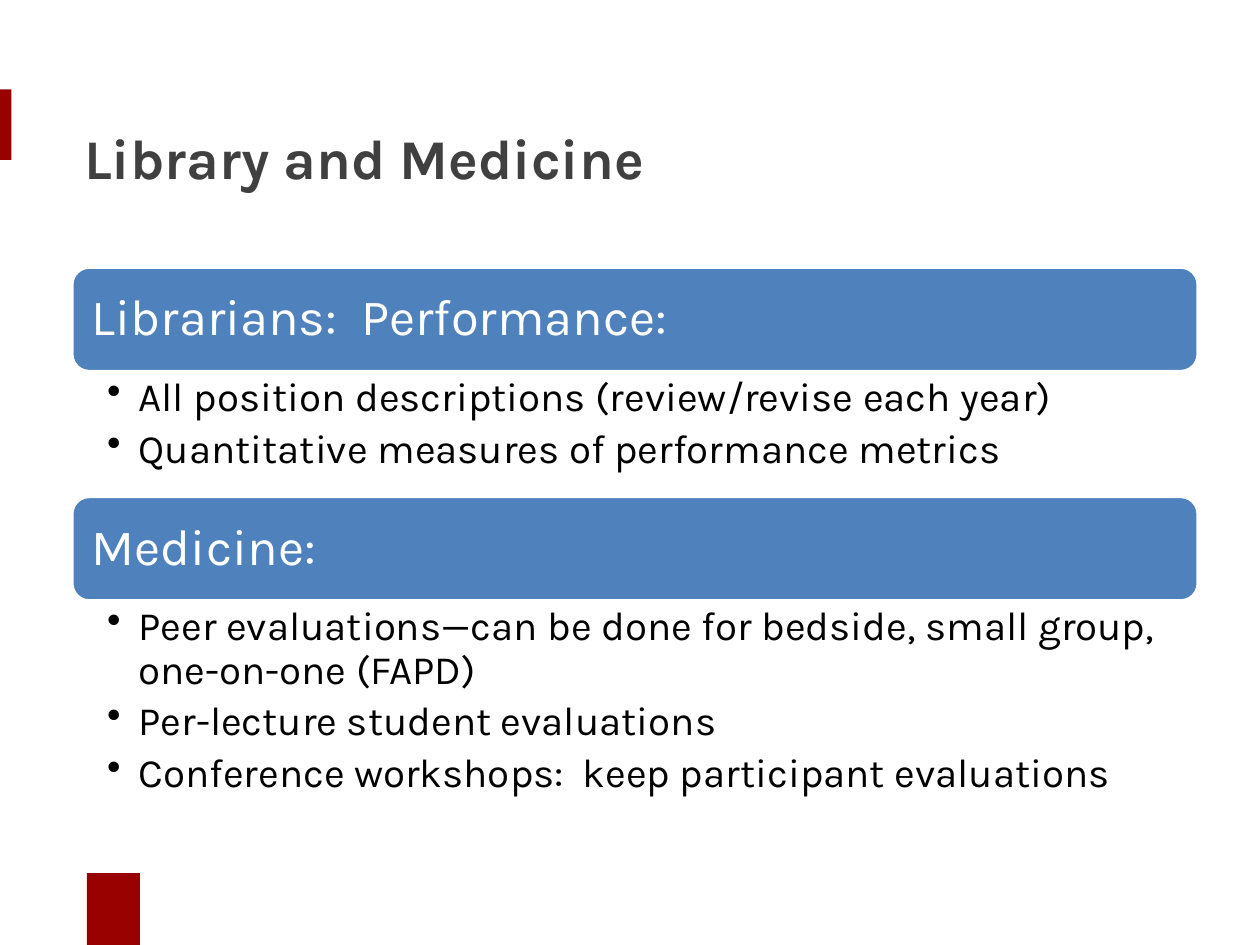
from lxml import etree
from pptx import Presentation
from pptx.dml.color import RGBColor
from pptx.enum import shapes, text
from pptx.oxml import ns
from pptx.util import Inches, Pt

COLORS = {"accent": "990000", "title": "404041", "bar": "4F81BD",
          "white": "FFFFFF", "body": "000000"}
LEFT, WIDTH, BAR_HEIGHT, BAR_INSET = 0.57, 8.94, 0.83, 0.04
SECTIONS = [
    (2.12, "Librarians:  Performance:", 0.98,
     ["All position descriptions (review/revise each year)",
      "Quantitative measures of performance metrics"]),
    (3.94, "Medicine:", 1.87,
     ["Peer evaluations—can be done for bedside, small group, one-on-one (FAPD)",
      "Per-lecture student evaluations",
      "Conference workshops:  keep participant evaluations"]),
]


class SlideBuilder:
    font = "Karla"

    def __init__(self, slide):
        self.slide = slide

    def color(self, name):
        return RGBColor.from_string(COLORS[name])

    def block(self, kind, box, fill, outline=None):
        block = self.slide.shapes.add_shape(kind, *map(Inches, box))
        block.shadow.inherit = False
        block.fill.solid()
        block.fill.fore_color.rgb = self.color(fill)
        if outline:
            block.line.color.rgb = self.color(outline)
            block.line.width = Pt(2)
        else:
            block.line.fill.background()

    def frame(self, box, insets, anchor):
        frame = self.slide.shapes.add_textbox(*map(Inches, box)).text_frame
        frame.word_wrap = True
        frame.vertical_anchor = anchor
        (frame.margin_left, frame.margin_top,
         frame.margin_right, frame.margin_bottom) = map(Inches, insets)
        return frame

    def words(self, paragraph, wording, size, color, bold=False):
        run = paragraph.add_run()
        run.text = wording
        run.font.name = self.font
        run.font.size = Pt(size)
        run.font.bold = bold
        run.font.color.rgb = self.color(color)

    def title(self, wording, box):
        frame = self.frame(box, (0.1, 0.05, 0.1, 0.05), text.MSO_ANCHOR.MIDDLE)
        self.words(frame.paragraphs[0], wording, 32, "title", bold=True)

    def heading(self, wording, top):
        self.block(shapes.MSO_SHAPE.ROUNDED_RECTANGLE,
                   (LEFT, top, WIDTH, BAR_HEIGHT), "bar", "white")
        box = (LEFT + BAR_INSET, top + BAR_INSET,
               WIDTH - 2 * BAR_INSET, BAR_HEIGHT - 2 * BAR_INSET)
        frame = self.frame(box, (0.12,) * 4, text.MSO_ANCHOR.MIDDLE)
        paragraph = frame.paragraphs[0]
        paragraph.line_spacing = 0.9
        self.words(paragraph, wording, 29, "white")

    def bullets(self, items, top, height):
        frame = self.frame((LEFT, top, WIDTH, height),
                           (0.28, 0.04, 0.23, 0.04), text.MSO_ANCHOR.TOP)
        for index, item in enumerate(items):
            paragraph = frame.add_paragraph() if index else frame.paragraphs[0]
            paragraph.level = 1
            paragraph.line_spacing = 0.9
            paragraph.space_after = Pt(4.6)
            properties = paragraph._p.get_or_add_pPr()
            properties.set("marL", str(Inches(0.25)))
            properties.set("indent", str(Inches(-0.25)))
            etree.SubElement(properties, ns.qn("a:buChar")).set("char", "•")
            self.words(paragraph, item, 23, "body")


def main():
    deck = Presentation()
    deck.slide_width, deck.slide_height = Inches(10), Inches(7.5)
    builder = SlideBuilder(deck.slides.add_slide(deck.slide_layouts[6]))
    for accent in ((0, 0.71, 0.09, 0.56), (0.69, 6.93, 0.42, 0.57)):
        builder.block(shapes.MSO_SHAPE.RECTANGLE, accent, "accent")
    builder.title("Library and Medicine", (0.57, 0.68, 4.99, 1.14))
    for top, heading, height, items in SECTIONS:
        builder.heading(heading, top)
        builder.bullets(items, top + BAR_HEIGHT, height)
    deck.save("out.pptx")


if __name__ == "__main__":
    main()
